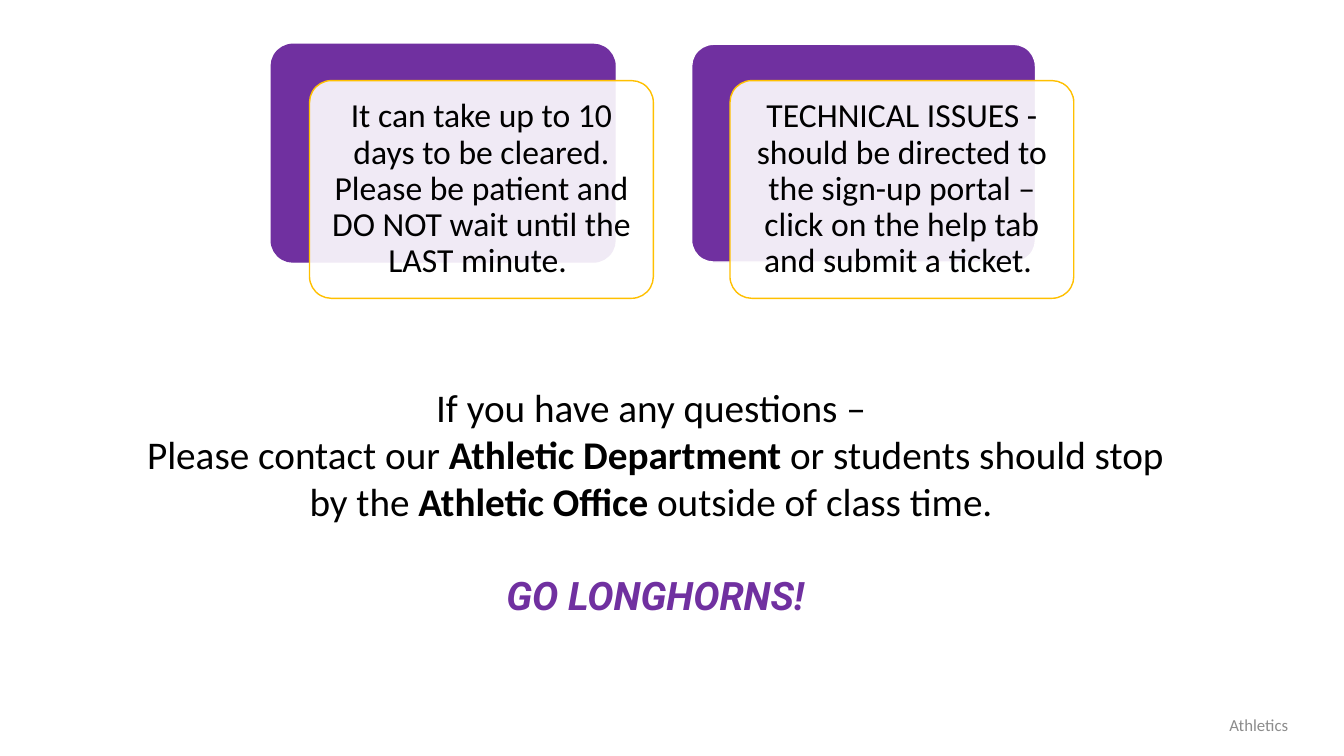
from dataclasses import dataclass

from lxml.etree import SubElement
from pptx import Presentation
from pptx.dml.color import RGBColor
from pptx.enum.shapes import MSO_SHAPE as Preset
from pptx.enum.text import MSO_ANCHOR as Anchor, PP_ALIGN as Align
from pptx.oxml.ns import qn
from pptx.util import Inches, Pt


@dataclass(frozen=True)
class Theme:
    purple: RGBColor = RGBColor(0x70, 0x30, 0xA0)
    gold: RGBColor = RGBColor(0xFF, 0xC0, 0x00)
    white: RGBColor = RGBColor(0xFF, 0xFF, 0xFF)
    black: RGBColor = RGBColor(0x00, 0x00, 0x00)
    grey: RGBColor = RGBColor(0x8C, 0x8C, 0x8C)
    font: str = "Calibri"
    cheer_font: str = "Roboto"
    message_size: int = 28
    card_size: int = 24
    footer_size: int = 12


THEME = Theme()

CARD_LEFT, CARD_TOP = 2.69, 0.44
CARD_WIDTH, CARD_HEIGHT = 3.41, 2.16
CARD_PITCH = 4.17
FRONT_SHIFT_X, FRONT_SHIFT_Y = 0.38, 0.36

NOTICES = [
    ("It can take up to 10 days to be cleared. Please be patient and "
     "DO NOT wait until the LAST minute. ", THEME.purple),
    ("TECHNICAL ISSUES - should be directed to the sign-up portal – "
     "click on the help tab and submit a ticket. ", THEME.white),
]
# Each line of the message is a list of (words, is bold).
MESSAGE = [
    [("If you have any questions – ", False)],
    [("Please contact our ", False), ("Athletic Department ", True),
     ("or students should stop by the ", False), ("Athletic Office ", True),
     ("outside of class time. ", False)],
]


def style(run, size, color=THEME.black, font=THEME.font, bold=False, italic=False):
    run.font.size = Pt(size)
    run.font.color.rgb = color
    run.font.name = font
    run.font.bold = bold
    run.font.italic = italic


def set_insets(frame, inset):
    frame.margin_left = frame.margin_right = Inches(inset)
    frame.margin_top = frame.margin_bottom = Inches(inset)


def add_panel(slide, left, top, fill, outline):
    panel = slide.shapes.add_shape(
        Preset.ROUNDED_RECTANGLE, Inches(left), Inches(top),
        Inches(CARD_WIDTH), Inches(CARD_HEIGHT))
    panel.adjustments[0] = 0.1
    panel.shadow.inherit = False
    panel.fill.solid()
    panel.fill.fore_color.rgb = fill
    panel.line.color.rgb = outline
    panel.line.width = Pt(1)
    return panel


def set_opacity(panel, percent):
    color = panel.fill._xPr.find(qn("a:solidFill"))[0]
    SubElement(color, qn("a:alpha"), val=str(percent * 1000))


def add_notice(slide, column, words, back_outline):
    """Purple panel with a translucent text card shifted down and right."""
    left = CARD_LEFT + column * CARD_PITCH
    add_panel(slide, left, CARD_TOP, THEME.purple, back_outline)
    card = add_panel(slide, left + FRONT_SHIFT_X, CARD_TOP + FRONT_SHIFT_Y,
                     THEME.white, THEME.gold)
    set_opacity(card, 90)
    frame = card.text_frame
    frame.word_wrap = True
    frame.vertical_anchor = Anchor.MIDDLE
    set_insets(frame, 0.1)
    notice = frame.paragraphs[0]
    notice.text = words
    notice.alignment = Align.CENTER
    notice.line_spacing = 0.9
    style(notice.runs[0], THEME.card_size)


def add_text_area(slide, left, top, width, height):
    area = slide.shapes.add_textbox(
        Inches(left), Inches(top), Inches(width), Inches(height))
    area.text_frame.word_wrap = True
    return area.text_frame


def add_message(slide):
    frame = add_text_area(slide, 1.15, 3.75, 10.7, 2.46)
    for index, parts in enumerate(MESSAGE):
        line = frame.add_paragraph() if index else frame.paragraphs[0]
        line.alignment = Align.CENTER
        for words, bold in parts:
            run = line.add_run()
            run.text = words
            style(run, THEME.message_size, bold=bold)
    cheer = frame.add_paragraph()
    cheer.text = "GO LONGHORNS!"
    cheer.alignment = Align.CENTER
    cheer.space_before = Pt(34)
    style(cheer.runs[0], THEME.message_size, THEME.purple, THEME.cheer_font,
          bold=True, italic=True)


def add_footer(slide):
    frame = add_text_area(slide, 12.04, 7.09, 0.89, 0.21)
    frame.vertical_anchor = Anchor.MIDDLE
    footer = frame.paragraphs[0]
    footer.text = "Athletics"
    footer.alignment = Align.CENTER
    style(footer.runs[0], THEME.footer_size, THEME.grey)


def main():
    deck = Presentation()
    deck.slide_width, deck.slide_height = Inches(13.33), Inches(7.5)
    blank_layout = deck.slide_layouts[6]
    slide = deck.slides.add_slide(blank_layout)
    add_footer(slide)
    add_message(slide)
    for column, (words, back_outline) in enumerate(NOTICES):
        add_notice(slide, column, words, back_outline)
    deck.save("out.pptx")


if __name__ == "__main__":
    main()
